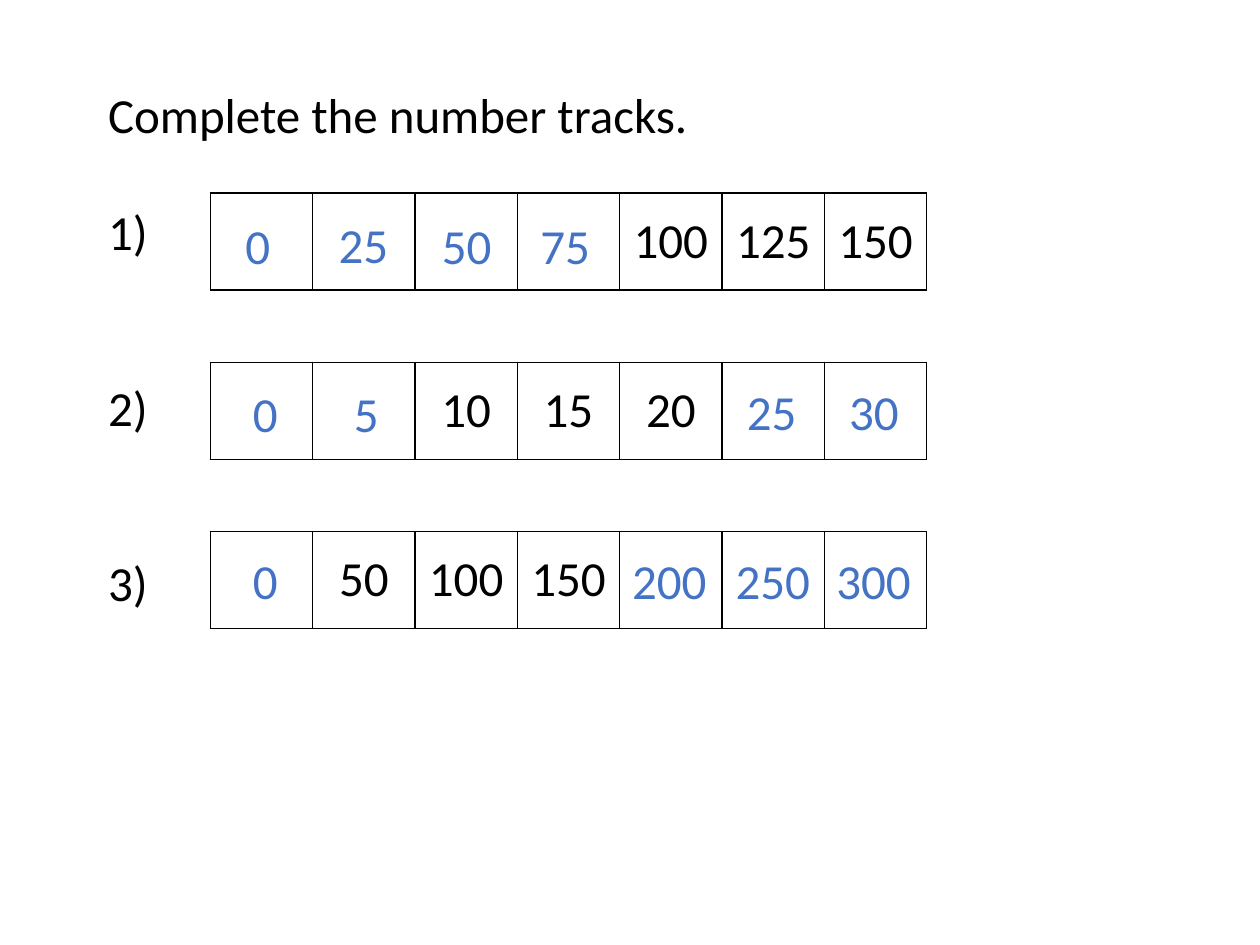
from lxml import etree
from pptx import Presentation
from pptx.dml.color import RGBColor
from pptx.enum import text as t
from pptx.oxml.ns import qn
from pptx.util import Pt

BLACK, BLUE = "000000", "4472C4"
COLUMN, ROW, PITCH = 58.5, 55.5, 96.8
ANSWER_WIDTH, ANSWER_HEIGHT = 45.4, 41
HEADING = "Complete the number tracks."
TRACKS = [
    ([None] * 4 + ["100", "125", "150"],
     [(0, "0", 13, 9.3), (1, "25", 7.8, 8.8), (2, "50", 8.3, 9.3), (3, "75", 6, 9.3)]),
    ([None, None, "10", "15", "20", None, None],
     [(0, "0", 17.3, 8.6), (1, "5", 16.4, 8.6), (5, "25", 7, 7.2), (6, "30", 6.9, 7.2)]),
    ([None, "50", "100", "150", None, None, None],
     [(0, "0", 17.3, 7.2), (4, "200", 0, 7.2), (5, "250", 0.6, 7.2), (6, "300", -0.4, 7.2)]),
]


def color(value):
    """Turn a hex string into a colour."""
    return RGBColor.from_string(value)


def style(paragraph, ink):
    """Format every run of a paragraph."""
    for run in paragraph.runs:
        run.font.name = "Calibri"
        run.font.size = Pt(28)
        run.font.color.rgb = color(ink)


def add_text(slide, left, top, width, height, lines, ink, gaps=()):
    """Place lines of text with the given spaces before the later ones."""
    frame = slide.shapes.add_textbox(Pt(left), Pt(top), Pt(width), Pt(height)).text_frame
    frame.word_wrap = True
    frame.text = "\n".join(lines)
    for paragraph in frame.paragraphs:
        style(paragraph, ink)
    for paragraph, gap in zip(frame.paragraphs[1:], gaps):
        paragraph.space_before = Pt(gap)


def add_borders(cell):
    """Draw a thin black line on all four sides of a cell."""
    properties = cell._tc.get_or_add_tcPr()
    for position, side in enumerate(("a:lnL", "a:lnR", "a:lnT", "a:lnB")):
        line = etree.Element(qn(side), w=str(Pt(1)))
        fill = etree.SubElement(line, qn("a:solidFill"))
        etree.SubElement(fill, qn("a:srgbClr"), val=BLACK)
        properties.insert(position, line)


def add_track(slide, left, top, numbers, answers):
    """Build one number track and lay the answers over its empty cells."""
    table = slide.shapes.add_table(
        1, len(numbers), Pt(left), Pt(top), Pt(COLUMN * len(numbers)), Pt(ROW)).table
    table.first_row = table.horz_banding = False
    for column, number in enumerate(numbers):
        table.columns[column].width = Pt(COLUMN)
        cell = table.cell(0, column)
        cell.fill.background()
        add_borders(cell)
        if number:
            cell.text_frame.text = number
            cell.vertical_anchor = t.MSO_ANCHOR.MIDDLE
            paragraph = cell.text_frame.paragraphs[0]
            paragraph.alignment = t.PP_ALIGN.CENTER
            style(paragraph, BLACK)
    for column, answer, shift, drop in answers:
        width = COLUMN if len(answer) > 2 else ANSWER_WIDTH
        add_text(slide, left + column * COLUMN + shift, top + drop,
                 width, ANSWER_HEIGHT, [answer], BLUE)


def main():
    """Build and save the worksheet slide."""
    deck = Presentation()
    deck.slide_width, deck.slide_height = Pt(720), Pt(540)
    slide = deck.slides.add_slide(deck.slide_layouts[6])
    labels = [f"{number})" for number in range(1, len(TRACKS) + 1)]
    add_text(slide, 54.7, 44.6, 590.4, 380, [HEADING] + labels, BLACK, (33.5, 66.7, 66.7))
    for index, (numbers, answers) in enumerate(TRACKS):
        add_track(slide, 120.2, 110.2 + index * PITCH, numbers, answers)
    deck.save("out.pptx")


if __name__ == "__main__":
    main()
